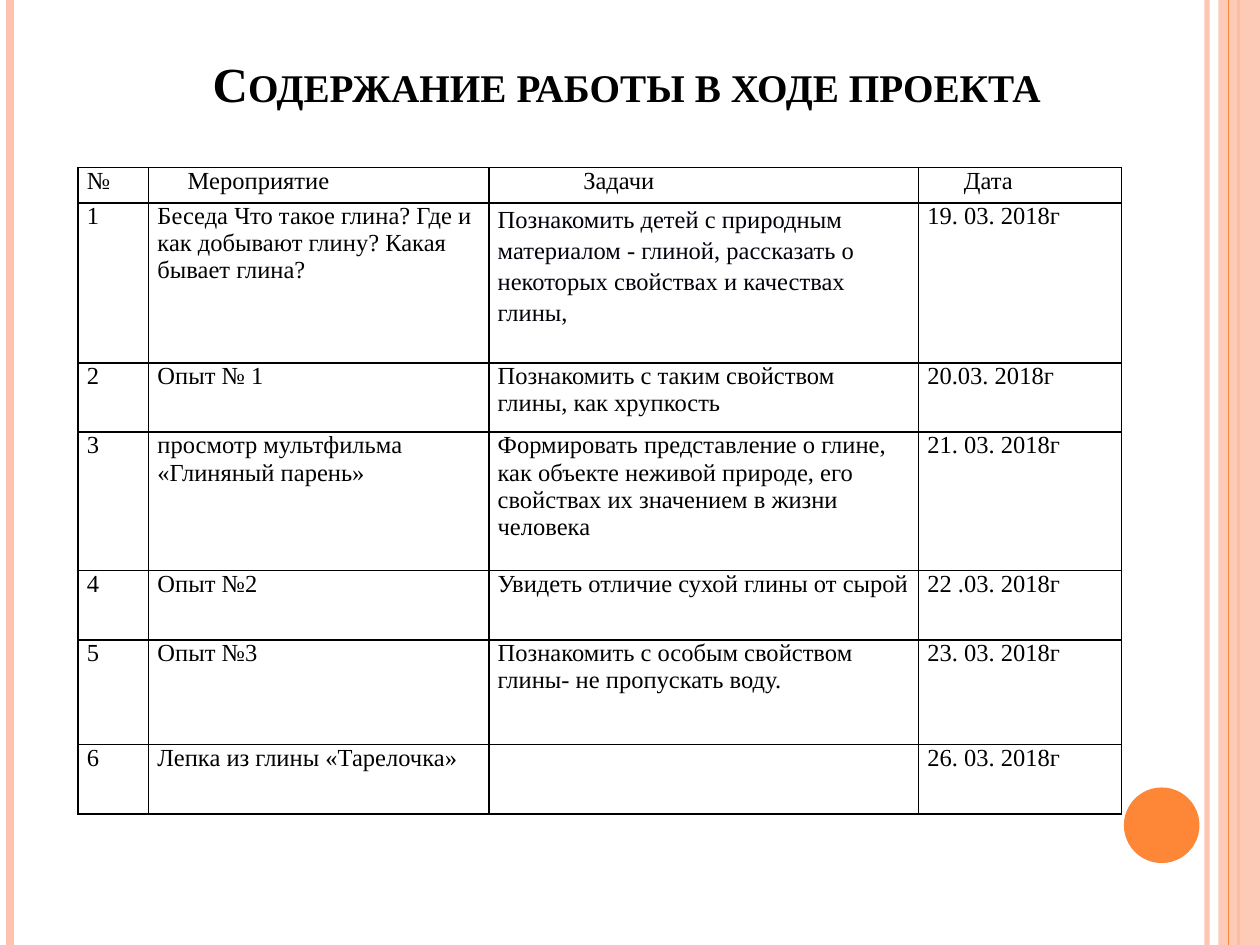
from dataclasses import dataclass

from lxml.etree import SubElement
from pptx import Presentation
from pptx.dml.color import RGBColor
from pptx.enum.shapes import MSO_CONNECTOR as Link, MSO_SHAPE as Kind
from pptx.enum.text import MSO_ANCHOR as Anchor, PP_ALIGN as Align
from pptx.oxml.ns import qn
from pptx.util import Inches, Pt

PEACH, ORANGE, BLACK, INK = "FEC3AE", "FE8637", "000000", "00000A"
FACE = "Times New Roman"


@dataclass
class Rule:
    x: float
    color: str
    width: float
    alpha: int = 100


@dataclass
class Disc:
    kind: Kind
    box: tuple
    color: str
    alpha: int = 100


@dataclass
class Event:
    name: str
    task: str
    date: str
    height: float
    color: str = BLACK
    space: float = 1.0


BACK = [Rule(9.58, PEACH, 3, 93), Rule(0.08, PEACH, 4.5), Rule(9.83, ORANGE, 1.5)]
BAND = Disc(Kind.RECTANGLE, (9.67, 0, 0.33, 7.5), PEACH, 87)
EDGE = Rule(9.75, ORANGE, 0.75)
DOT = Disc(Kind.OVAL, (8.92, 6.25, 0.6, 0.6), ORANGE)

COLS = [0.56, 2.7, 3.41, 1.61]
HEADS = [("№", 0), ("Мероприятие", 0.24), ("Задачи", 0.68), ("Дата", 0.29)]
HEAD_H = 0.28
EVENTS = [
    Event("Беседа Что такое глина? Где и как добывают глину? Какая бывает глина?",
          "Познакомить детей с природным материалом - глиной, рассказать о "
          "некоторых свойствах и качествах глины,",
          "19. 03. 2018г", 1.27, INK, 1.15),
    Event("Опыт № 1", "Познакомить с таким свойством глины, как хрупкость",
          "20.03. 2018г", 0.55),
    Event("просмотр мультфильма «Глиняный парень»",
          "Формировать представление о глине, как объекте неживой природе, "
          "его свойствах их значением в жизни человека",
          "21. 03. 2018г", 1.1),
    Event("Опыт №2", "Увидеть отличие сухой глины от сырой", "22 .03. 2018г", 0.55),
    Event("Опыт №3", "Познакомить с особым свойством глины- не пропускать воду.",
          "23. 03. 2018г", 0.83),
    Event("Лепка из глины «Тарелочка»", "", "26. 03. 2018г", 0.55),
]


def paint(fill, color: str, alpha: int = 100) -> None:
    fill.solid()
    fill.fore_color.rgb = RGBColor.from_string(color)
    if alpha < 100:
        tint = fill._xPr.find(qn("a:solidFill"))[0]
        SubElement(tint, qn("a:alpha"), val=str(alpha * 1000))


def draw_rule(slide, rule: Rule) -> None:
    x = Inches(rule.x)
    line = slide.shapes.add_connector(Link.STRAIGHT, x, 0, x, Inches(7.5))
    line.line.width = Pt(rule.width)
    paint(line.line.fill, rule.color, rule.alpha)
    SubElement(line._element.spPr, qn("a:effectLst"))


def draw_disc(slide, disc: Disc) -> None:
    shape = slide.shapes.add_shape(disc.kind, *map(Inches, disc.box))
    shape.shadow.inherit = False
    shape.line.fill.background()
    paint(shape.fill, disc.color, disc.alpha)


def style(font, size: float, color: str = BLACK) -> None:
    font.name = FACE
    font.size = Pt(size)
    paint(font.fill, color)


def draw_title(slide, text: str) -> None:
    box = slide.shapes.add_textbox(*map(Inches, (0.5, 0.3, 8.95, 0.64)))
    frame = box.text_frame
    frame.word_wrap = True
    frame.vertical_anchor = Anchor.BOTTOM
    frame.text = text
    para = frame.paragraphs[0]
    para.alignment = Align.CENTER
    run = para.runs[0]
    style(run.font, 28)
    run.font.bold = True
    run._r.get_or_add_rPr().set("cap", "small")


def frame_cell(cell) -> None:
    props = cell._tc.get_or_add_tcPr()
    for side in ("lnL", "lnR", "lnT", "lnB"):
        line = SubElement(props, qn(f"a:{side}"), w=str(Pt(1)))
        fill = SubElement(line, qn("a:solidFill"))
        SubElement(fill, qn("a:srgbClr"), val=BLACK)
    cell.fill.background()


def fill_cell(cell, text: str, color: str = BLACK,
              space: float = 1.0, indent: float = 0) -> None:
    cell.margin_left = cell.margin_right = Inches(0.07)
    cell.margin_top = cell.margin_bottom = 0
    frame_cell(cell)
    cell.text_frame.text = text
    para = cell.text_frame.paragraphs[0]
    para.line_spacing = space
    if indent:
        para._p.get_or_add_pPr().set("marL", str(Inches(indent)))
    for run in para.runs:
        style(run.font, 14, color)


def draw_plan(slide) -> None:
    highs = [HEAD_H] + [event.height for event in EVENTS]
    box = (0.62, 1.33, sum(COLS), sum(highs))
    grid = slide.shapes.add_table(len(highs), len(COLS), *map(Inches, box)).table
    grid.first_row = grid.horz_banding = False
    for col, width in zip(grid.columns, COLS):
        col.width = Inches(width)
    for row, height in zip(grid.rows, highs):
        row.height = Inches(height)
    for c, (head, indent) in enumerate(HEADS):
        fill_cell(grid.cell(0, c), head, indent=indent)
    for r, event in enumerate(EVENTS, 1):
        fill_cell(grid.cell(r, 0), str(r))
        fill_cell(grid.cell(r, 1), event.name)
        fill_cell(grid.cell(r, 2), event.task, event.color, event.space)
        fill_cell(grid.cell(r, 3), event.date)


def main() -> None:
    deck = Presentation()
    deck.slide_width, deck.slide_height = Inches(10), Inches(7.5)
    slide = deck.slides.add_slide(deck.slide_layouts[6])
    for rule in BACK:
        draw_rule(slide, rule)
    draw_disc(slide, BAND)
    draw_rule(slide, EDGE)
    draw_disc(slide, DOT)
    draw_title(slide, "Содержание работы в ходе проекта")
    draw_plan(slide)
    deck.save("out.pptx")


if __name__ == "__main__":
    main()
